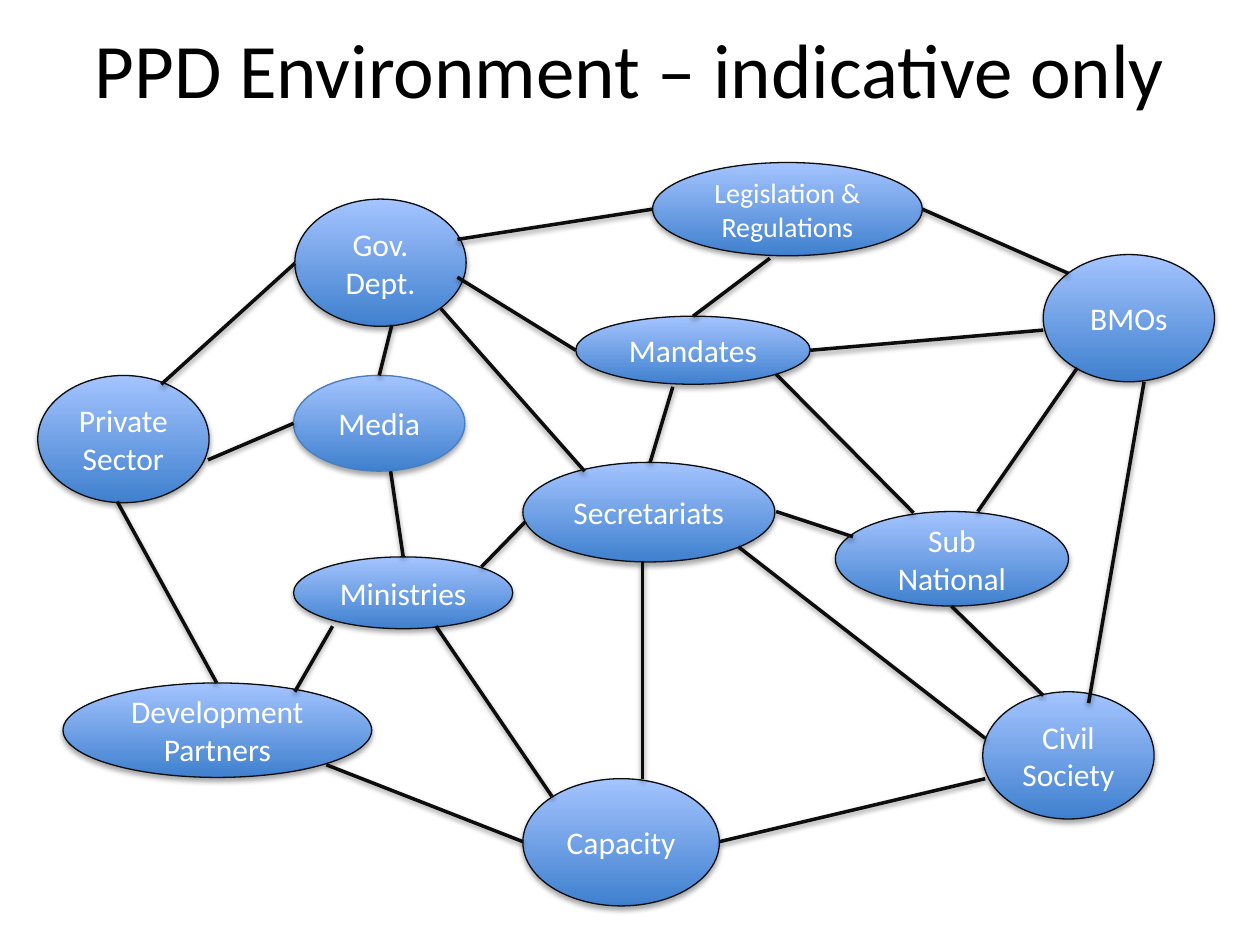
"""Builds a one-slide network map of the PPD environment."""
from lxml import etree
from pptx import Presentation
from pptx.dml.color import RGBColor
from pptx.enum import shapes, text
from pptx.oxml.ns import qn
from pptx.util import Inches, Pt

FONT = "Calibri"
BLACK = RGBColor(0x00, 0x00, 0x00)
WHITE = RGBColor(0xFF, 0xFF, 0xFF)
INK = RGBColor(0x0D, 0x0D, 0x0D)
BLUE_EDGE = RGBColor(0x4B, 0x7E, 0xBC)
DARK_BLUE = RGBColor(0x3F, 0x80, 0xCE)
LIGHT_BLUE = RGBColor(0xA4, 0xC4, 0xFF)

NODES = [
    ("Ministries", 2.33, 4.42, 1.74, 0.57),
    ("Mandates", 4.57, 2.51, 1.86, 0.54),
    ("Private Sector", 0.3, 2.98, 1.36, 1.01),
    ("Media", 2.33, 2.98, 1.36, 0.76, 18, BLUE_EDGE),
    ("Secretariats", 4.15, 3.67, 2, 0.79),
    ("Sub National", 6.63, 4.06, 1.85, 0.75),
    ("BMOs", 8.28, 2.02, 1.36, 1.01),
    ("Development Partners", 0.5, 5.42, 2.45, 0.75),
    ("Capacity", 4.15, 6.18, 1.56, 1.01),
    ("Civil Society", 7.8, 5.49, 1.36, 1.01),
    ("Gov. Dept.", 2.34, 1.58, 1.36, 1.01),
    ("Legislation & Regulations", 5.18, 1.29, 2.14, 0.74, 16),
]

LINKS = [
    (3.46, 4.97, 4.38, 6.32),
    (0.93, 3.98, 1.72, 5.42),
    (1.28, 3.05, 2.34, 2.09),
    (2.59, 6.07, 4.15, 6.68),
    (3.63, 2.2, 4.57, 2.78),
    (5.71, 6.68, 7.82, 6.18),
    (7.55, 4.81, 8.28, 5.52),
    (5.1, 4.46, 5.1, 6.18),
    (3.1, 3.74, 3.2, 4.42),
    (3.11, 2.58, 3.01, 2.98),
    (3.5, 2.45, 4.64, 3.74),
    (6.16, 4.06, 6.77, 4.26),
    (8.55, 2.92, 7.76, 4.06),
    (1.65, 3.65, 2.33, 3.36),
    (2.34, 5.49, 2.64, 4.97),
    (5.86, 4.34, 7.82, 5.86),
    (6.16, 2.97, 7.25, 4.07),
    (6.43, 2.78, 8.28, 2.62),
    (9.08, 3.03, 8.64, 5.58),
    (5.18, 1.66, 3.63, 1.9),
    (3.82, 4.5, 4.17, 4.14),
    (5.34, 3.07, 5.16, 3.67),
    (8.48, 2.17, 7.32, 1.66),
    (6.11, 2.05, 5.5, 2.51),
]


def set_text(sp, words, size, color):
    """Write centred text into a shape."""
    tf = sp.text_frame
    tf.text = words
    tf.word_wrap = True
    tf.vertical_anchor = text.MSO_ANCHOR.MIDDLE
    p = tf.paragraphs[0]
    p.alignment = text.PP_ALIGN.CENTER
    font = p.runs[0].font
    font.name, font.size = FONT, Pt(size)
    font.color.rgb = color


def add_shadow(effects, distance, opacity):
    """Put a soft downward shadow into an effect list."""
    shadow = etree.SubElement(
        effects, qn("a:outerShdw"), blurRad=str(Pt(3.1)), dist=str(Pt(distance)),
        dir="5400000", rotWithShape="0")
    color = etree.SubElement(shadow, qn("a:srgbClr"), val=str(BLACK))
    etree.SubElement(color, qn("a:alpha"), val=str(opacity * 1000))


def add_title(slide, words):
    """Place and fill the title."""
    title = slide.shapes.title
    title.left, title.top = Inches(0.5), Inches(0.06)
    title.width, title.height = Inches(9), Inches(0.96)
    set_text(title, words, 44, BLACK)


def add_node(slide, words, left, top, width, height, size=18, edge=INK):
    """Add a labelled gradient ellipse."""
    sp = slide.shapes.add_shape(
        shapes.MSO_SHAPE.OVAL, Inches(left), Inches(top), Inches(width), Inches(height))
    sp.fill.gradient()
    sp.fill.gradient_angle = 90
    for stop, color in zip(sp.fill.gradient_stops, (DARK_BLUE, LIGHT_BLUE)):
        stop.color.rgb = color
    sp.line.color.rgb = edge
    sp.line.width = Pt(0.75)
    sp.shadow.inherit = False
    add_shadow(sp._element.spPr.find(qn("a:effectLst")), 1.8, 35)
    set_text(sp, words, size, WHITE)


def add_link(slide, *ends):
    """Add a straight line between two points."""
    link = slide.shapes.add_connector(
        shapes.MSO_CONNECTOR.STRAIGHT, *(Inches(v) for v in ends))
    link.line.color.rgb = INK
    link.line.width = Pt(2)
    effects = etree.SubElement(link._element.spPr, qn("a:effectLst"))
    add_shadow(effects, 1.6, 38)


def main():
    """Build and save the slide."""
    prs = Presentation()
    prs.slide_width, prs.slide_height = Inches(10), Inches(7.5)
    s = prs.slides.add_slide(prs.slide_layouts[5])
    add_title(s, "PPD Environment – indicative only")
    for node in NODES:
        add_node(s, *node)
    for link in LINKS:
        add_link(s, *link)
    prs.save("out.pptx")


if __name__ == "__main__":
    main()
